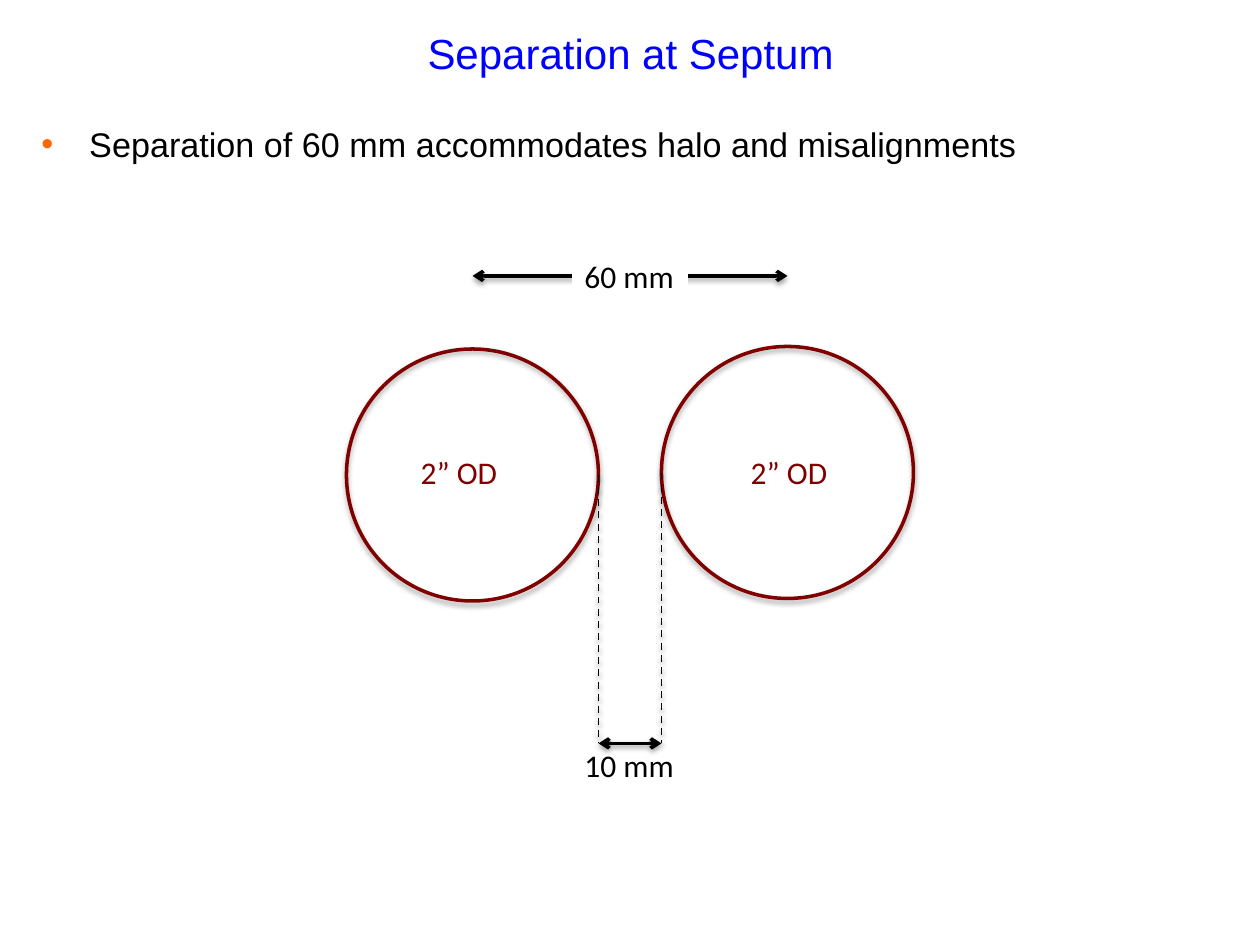
from lxml.etree import SubElement
from pptx import Presentation
from pptx.dml.color import RGBColor
from pptx.enum.dml import MSO_LINE
from pptx.enum.shapes import MSO_CONNECTOR, MSO_SHAPE
from pptx.enum.text import MSO_ANCHOR, MSO_AUTO_SIZE, PP_ALIGN
from pptx.oxml.ns import qn
from pptx.util import Inches, Pt

BLACK, MAROON, BLUE, ORANGE, WHITE = "000000", "800000", "0000FF", "FF6600", "FFFFFF"
TITLE = "Separation at Septum"
BULLET = "Separation of 60 mm accommodates halo and misalignments"

MARGIN, FULL_W = 0.23, 9.55
DIAMETER, GAP, CENTER = 2, 0.5, 5
LABEL_H = 0.4
TOP_ARROW_Y, BOTTOM_ARROW_Y = 2.19, 5.9
# text, left, top, width, colour, fill
LABELS = [
    ("2” OD", 3.24, 3.55, 0.82, MAROON, None),
    ("2” OD", 5.86, 3.55, 0.82, MAROON, None),
    ("10 mm", 4.54, 5.87, 0.92, BLACK, None),
    ("60 mm", 4.54, TOP_ARROW_Y - LABEL_H / 2, 0.92, BLACK, WHITE),
]
# side of the centre line, top
PIPES = [(-1, 2.77), (1, 2.75)]


def rgb(color):
    return RGBColor.from_string(color)


def add_text(text, x, y, w, h, size=18, font="Calibri", color=BLACK, fill=None,
             align=PP_ALIGN.LEFT, anchor=MSO_ANCHOR.TOP, wrap=False, bullet=None):
    box = [Inches(v) for v in (x, y, w, h)]
    if fill:
        s = shapes.add_shape(MSO_SHAPE.RECTANGLE, *box)
        s.shadow.inherit = False
        s.fill.solid()
        s.fill.fore_color.rgb = rgb(fill)
        s.line.fill.background()
    else:
        s = shapes.add_textbox(*box)
    tf = s.text_frame
    tf.word_wrap = wrap
    tf.auto_size = MSO_AUTO_SIZE.NONE if wrap else MSO_AUTO_SIZE.SHAPE_TO_FIT_TEXT
    tf.vertical_anchor = anchor
    p = tf.paragraphs[0]
    p.alignment = align
    if bullet:
        pPr = p._p.get_or_add_pPr()
        pPr.set("marL", str(Inches(0.38)))
        pPr.set("indent", str(-Inches(0.38)))
        SubElement(SubElement(pPr, qn("a:buClr")), qn("a:srgbClr"), val=bullet)
        SubElement(pPr, qn("a:buFont"), typeface="Arial")
        SubElement(pPr, qn("a:buChar"), char="•")
    r = p.add_run()
    r.text = text
    r.font.size, r.font.name = Pt(size), font
    r.font.color.rgb = rgb(color)


def add_shadow(s, opacity, distance):
    effects = SubElement(s._element.spPr, qn("a:effectLst"))
    shadow = SubElement(effects, qn("a:outerShdw"), blurRad=str(Pt(3.1)),
                        dist=str(Pt(distance)), dir="5400000", rotWithShape="0")
    color = SubElement(shadow, qn("a:srgbClr"), val=BLACK)
    SubElement(color, qn("a:alpha"), val=str(opacity * 1000))


def add_line(x1, y1, x2, y2, width=2, dashed=False, arrows=False):
    s = shapes.add_connector(MSO_CONNECTOR.STRAIGHT, *[Inches(v) for v in (x1, y1, x2, y2)])
    s.line.color.rgb = rgb(BLACK)
    s.line.width = Pt(width)
    if dashed:
        s.line.dash_style = MSO_LINE.DASH
    if arrows:
        for end in ("a:headEnd", "a:tailEnd"):
            SubElement(s.line._get_or_add_ln(), qn(end), type="arrow")
    add_shadow(s, 38, 1.6)


def add_pipe(x, y):
    s = shapes.add_shape(MSO_SHAPE.OVAL, *[Inches(v) for v in (x, y, DIAMETER, DIAMETER)])
    s.fill.background()
    s.line.color.rgb = rgb(MAROON)
    s.line.width = Pt(2)
    add_shadow(s, 35, 1.8)


prs = Presentation()
prs.slide_width, prs.slide_height = Inches(10), Inches(7.5)
shapes = prs.slides.add_slide(prs.slide_layouts[6]).shapes

add_text(TITLE, MARGIN, 0.11, FULL_W, 0.62, size=24, font="Arial", color=BLUE,
         align=PP_ALIGN.CENTER, anchor=MSO_ANCHOR.MIDDLE, wrap=True)
add_text(BULLET, MARGIN, 0.93, FULL_W, 5.93, size=19.5, font="Arial",
         wrap=True, bullet=ORANGE)

half_gap, half_pitch = GAP / 2, (GAP + DIAMETER) / 2
for side, top in PIPES:
    add_pipe(CENTER + side * half_pitch - DIAMETER / 2, top)
    edge = CENTER + side * half_gap
    add_line(edge, top + DIAMETER / 2, edge, BOTTOM_ARROW_Y, width=1, dashed=True)
for half, y in ((half_gap, BOTTOM_ARROW_Y), (half_pitch, TOP_ARROW_Y)):
    add_line(CENTER - half, y, CENTER + half, y, arrows=True)
for text, x, y, w, color, fill in LABELS:
    add_text(text, x, y, w, LABEL_H, color=color, fill=fill)

prs.save("out.pptx")
